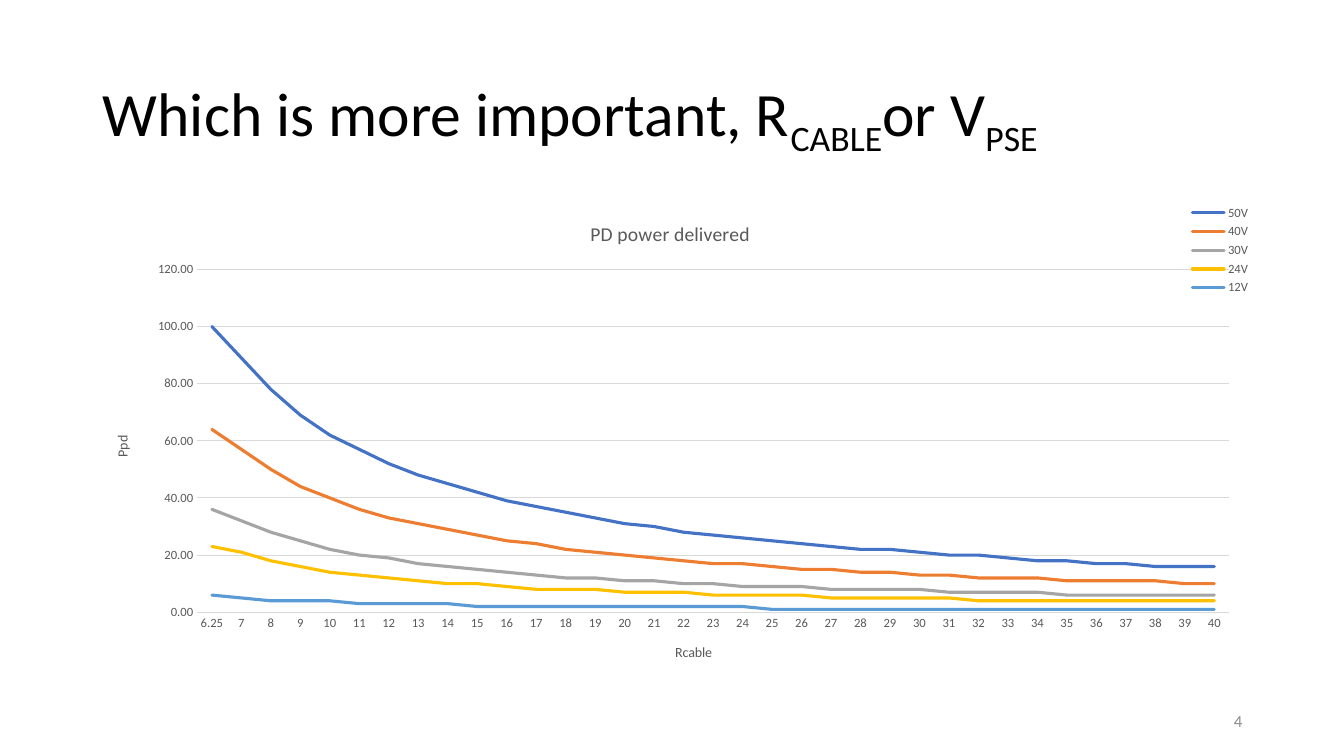
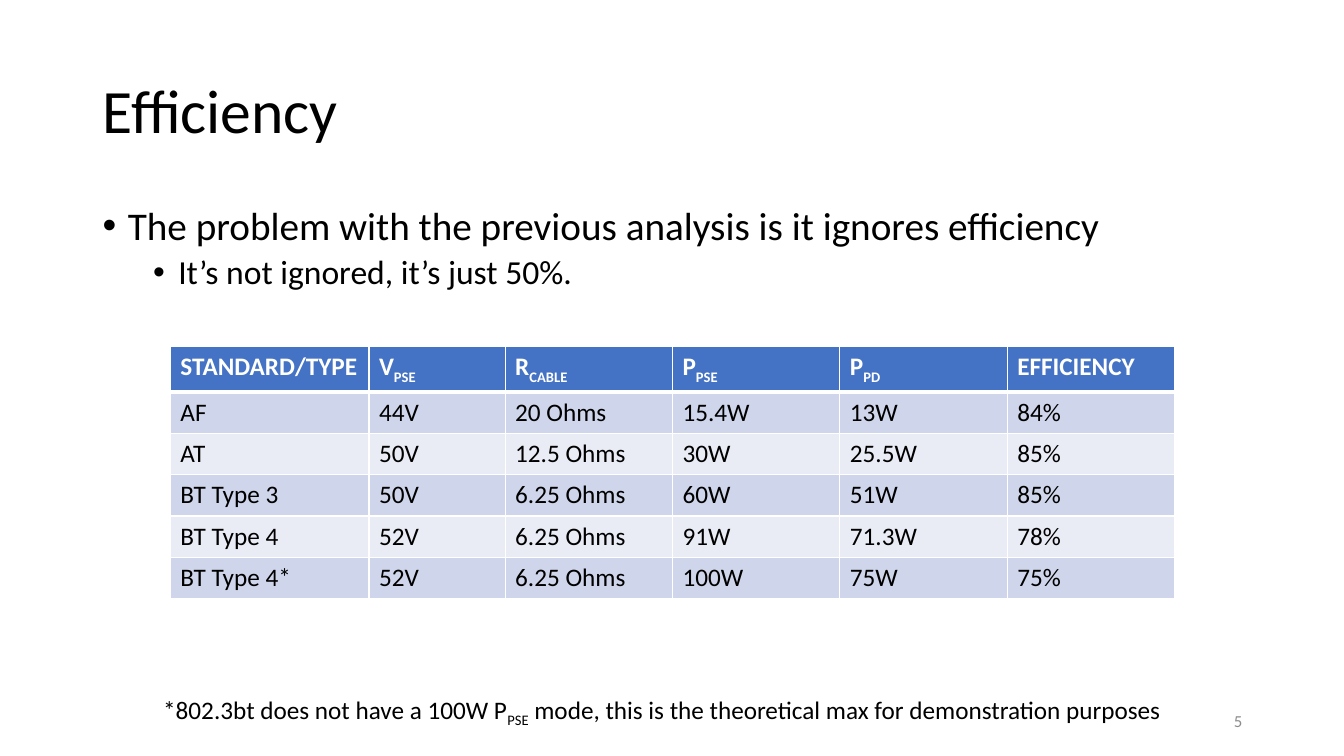
"""Build two slides on cable power delivery: a line chart and an efficiency table."""
from lxml import etree
from pptx import Presentation
from pptx.chart.data import CategoryChartData
from pptx.dml.color import RGBColor
from pptx.enum.chart import XL_CHART_TYPE, XL_LEGEND_POSITION, XL_TICK_MARK
from pptx.enum.text import MSO_ANCHOR, MSO_AUTO_SIZE, PP_ALIGN
from pptx.oxml.ns import qn
from pptx.util import Inches, Pt

LINE = XL_CHART_TYPE.LINE
CORNER = XL_LEGEND_POSITION.CORNER
NO_TICK = XL_TICK_MARK.NONE
TOP, MIDDLE = MSO_ANCHOR.TOP, MSO_ANCHOR.MIDDLE
NO_FIT = MSO_AUTO_SIZE.NONE
LEFT, RIGHT = PP_ALIGN.LEFT, PP_ALIGN.RIGHT

FONT = "Calibri"
BLACK, WHITE, GREY, GRID, PALE = "000000", "FFFFFF", "595959", "D9D9D9", "8C8C8C"
HEADER, BANDS = "4472C4", ("CFD5EA", "E9EBF5")

TITLE_BOX = (0.92, 0.4, 11.5, 1.45)
CONTENT_BOX = (0.92, 2, 11.5, 4.76)
NUMBER_BOX = (9.42, 6.95, 3, 0.4)
NOTE_BOX = (1.52, 6.84, 10.29, 0.4)

CHART_SLIDE_TITLE = "Which is more important, R_CABLE_or V_PSE_"
CHART_TITLE, X_TITLE, Y_TITLE = "PD power delivered ", "Rcable", "Ppd"
RESISTANCES = [6.25, *range(7, 41)]
VOLTAGES = {50: "4472C4", 40: "ED7D31", 30: "A5A5A5", 24: "FFC000", 12: "5B9BD5"}

TABLE_SLIDE_TITLE = "Efficiency"
BULLETS = [
    ("The problem with the previous analysis is it ignores efficiency", 0, 28, 10),
    ("It’s not ignored, it’s just 50%.", 1, 24, 5),
]
TABLE_AT = (1.69, 3.44)
COLUMN_WIDTHS = [1.97, 1.35] + [1.66] * 4
ROW_HEIGHTS = [0.45] + [0.41] * 5
ROWS = [
    ("STANDARD/TYPE", "V_PSE_", "R_CABLE_", "P_PSE_", "P_PD_", "EFFICIENCY"),
    ("AF", "44V", "20 Ohms", "15.4W", "13W", "84%"),
    ("AT", "50V", "12.5 Ohms", "30W", "25.5W", "85%"),
    ("BT Type 3", "50V", "6.25 Ohms", "60W", "51W", "85%"),
    ("BT Type 4", "52V", "6.25 Ohms", "91W", "71.3W", "78%"),
    ("BT Type 4*", "52V", "6.25 Ohms", "100W", "75W", "75%"),
]
NOTE = ("*802.3bt does not have a 100W P_PSE_ mode, "
        "this is the theoretical max for demonstration purposes")


def rgb(color):
    return RGBColor.from_string(color)


def style(font, size, color, bold=False):
    font.name, font.size, font.bold = FONT, Pt(size), bold
    font.color.rgb = rgb(color)


def write(p, text, size, color=BLACK, bold=False, align=LEFT):
    """Add the text run by run, with the parts between underscores as subscript."""
    p.alignment = align
    for i, piece in enumerate(text.split("_")):
        if piece:
            r = p.add_run()
            r.text = piece
            style(r.font, size, color, bold)
            if i % 2:
                r._r.get_or_add_rPr().set("baseline", "-25000")


def add_text(s, box, anchor=TOP):
    tf = s.shapes.add_textbox(*map(Inches, box)).text_frame
    tf.word_wrap, tf.vertical_anchor = True, anchor
    return tf


def add_slide(prs, title, number):
    s = prs.slides.add_slide(prs.slide_layouts[5])
    sp = s.shapes.title
    sp.left, sp.top, sp.width, sp.height = map(Inches, TITLE_BOX)
    tf = sp.text_frame
    tf.auto_size, tf.vertical_anchor = NO_FIT, MIDDLE
    p = tf.paragraphs[0]
    p.line_spacing = 0.9
    write(p, title, 44)
    number_tf = add_text(s, NUMBER_BOX, MIDDLE)
    write(number_tf.paragraphs[0], str(number), 12, PALE, align=RIGHT)
    return s


def set_title(owner, text, size):
    p = owner.text_frame.paragraphs[0]
    r = p.add_run()
    r.text = text
    style(r.font, size, GREY)


def add_power_chart(s):
    data = CategoryChartData()
    data.categories = RESISTANCES
    for volts in VOLTAGES:
        data.add_series(f"{volts}V", [round(volts ** 2 / (4 * r)) for r in RESISTANCES])
    chart = s.shapes.add_chart(LINE, *map(Inches, CONTENT_BOX), data).chart
    style(chart.font, 10, BLACK)
    set_title(chart.chart_title, CHART_TITLE, 14)
    for series, color in zip(chart.plots[0].series, VOLTAGES.values()):
        series.smooth = False
        series.format.line.width = Pt(2.25)
        series.format.line.color.rgb = rgb(color)
        series._element.find(f".//{qn('a:ln')}").set("cap", "rnd")
    x, y = chart.category_axis, chart.value_axis
    for axis, text in ((x, X_TITLE), (y, Y_TITLE)):
        set_title(axis.axis_title, text, 10)
        axis.major_tick_mark = axis.minor_tick_mark = NO_TICK
        style(axis.tick_labels.font, 9, GREY)
    y.tick_labels.number_format = "0.00"
    y.tick_labels.number_format_is_linked = False
    y.format.line.fill.background()
    for line in (x.format.line, y.major_gridlines.format.line):
        line.width = Pt(0.75)
        line.color.rgb = rgb(GRID)
    chart.has_legend = True
    chart.legend.position = CORNER
    chart.legend.include_in_layout = True
    style(chart.legend.font, 9, GREY)


def add_bullets(s):
    tf = add_text(s, CONTENT_BOX)
    for i, (text, level, size, before) in enumerate(BULLETS):
        p = tf.add_paragraph() if i else tf.paragraphs[0]
        p.level, p.line_spacing, p.space_before = level, 0.9, Pt(before)
        write(p, text, size)
        pPr = p._p.get_or_add_pPr()
        pPr.set("marL", str(Inches(0.25 + 0.5 * level)))
        pPr.set("indent", str(-Inches(0.25)))
        etree.SubElement(pPr, qn("a:buFont")).set("typeface", "Arial")
        etree.SubElement(pPr, qn("a:buChar")).set("char", "•")


def add_borders(cell, row):
    tcPr = cell._tc.get_or_add_tcPr()
    for side in "LRTB":
        width = 3 if (row, side) in ((0, "B"), (1, "T")) else 1
        ln = etree.SubElement(tcPr, qn(f"a:ln{side}"), w=str(Pt(width)))
        fill = etree.SubElement(ln, qn("a:solidFill"))
        etree.SubElement(fill, qn("a:srgbClr"), val=WHITE)


def add_efficiency_table(s):
    size = (sum(COLUMN_WIDTHS), sum(ROW_HEIGHTS))
    table = s.shapes.add_table(len(ROWS), len(COLUMN_WIDTHS),
                               *map(Inches, TABLE_AT + size)).table
    for column, width in zip(table.columns, COLUMN_WIDTHS):
        column.width = Inches(width)
    for i, (row, height, texts) in enumerate(zip(table.rows, ROW_HEIGHTS, ROWS)):
        row.height = Inches(height)
        head = i == 0
        for cell, text in zip(row.cells, texts):
            add_borders(cell, i)
            cell.fill.solid()
            cell.fill.fore_color.rgb = rgb(HEADER if head else BANDS[(i - 1) % 2])
            write(cell.text_frame.paragraphs[0], text, 18, WHITE if head else BLACK, head)


def main():
    prs = Presentation()
    prs.slide_width, prs.slide_height = Inches(13.33), Inches(7.5)
    add_power_chart(add_slide(prs, CHART_SLIDE_TITLE, 4))
    s = add_slide(prs, TABLE_SLIDE_TITLE, 5)
    add_bullets(s)
    add_efficiency_table(s)
    write(add_text(s, NOTE_BOX).paragraphs[0], NOTE, 18)
    prs.save("out.pptx")


if __name__ == "__main__":
    main()
